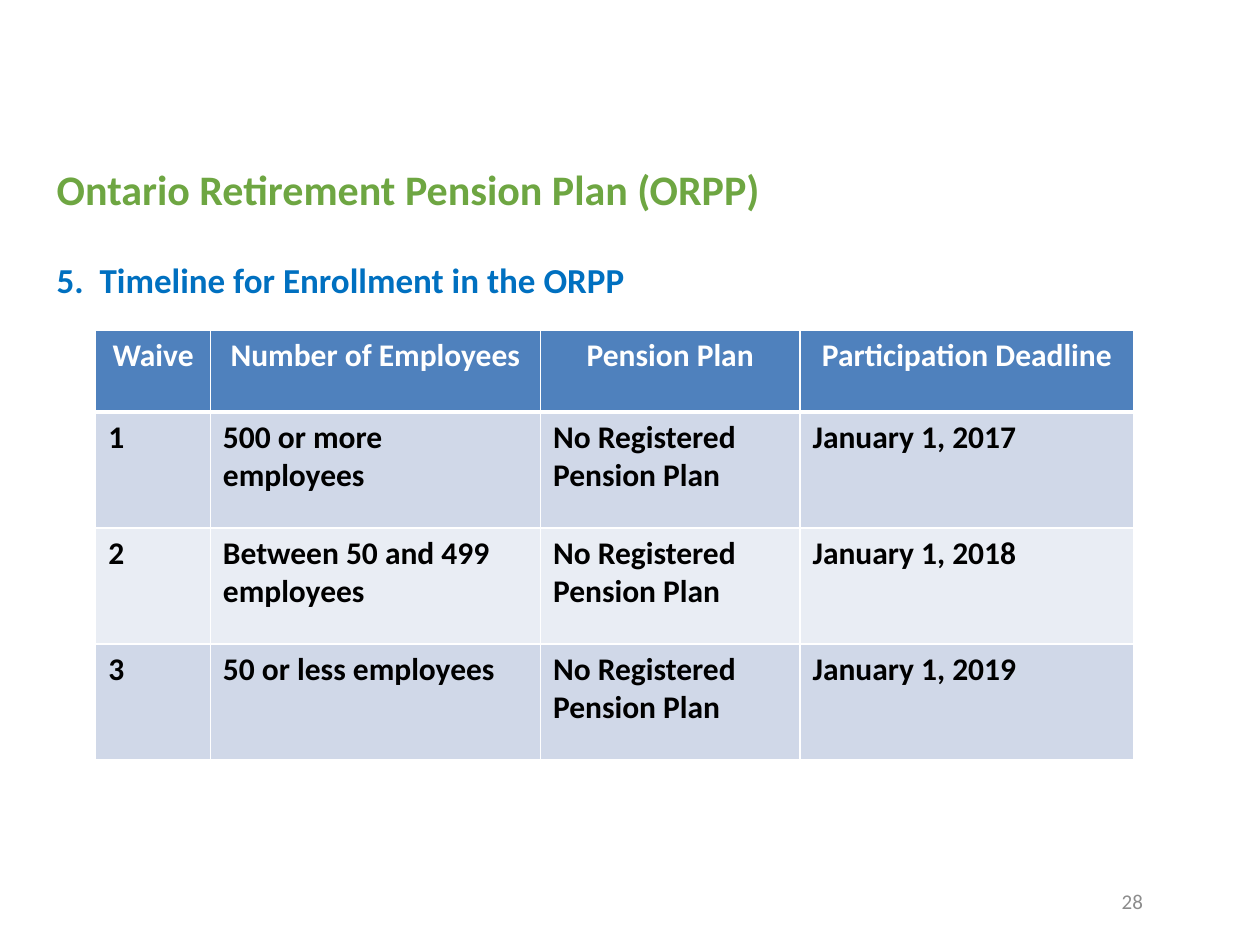
from lxml import etree
from pptx import Presentation
from pptx.dml.color import RGBColor
from pptx.enum.text import MSO_ANCHOR, MSO_AUTO_SIZE, PP_ALIGN
from pptx.oxml.ns import qn
from pptx.util import Inches, Pt

LEFT, CENTER, RIGHT = PP_ALIGN.LEFT, PP_ALIGN.CENTER, PP_ALIGN.RIGHT
TOP, MIDDLE, BOTTOM = MSO_ANCHOR.TOP, MSO_ANCHOR.MIDDLE, MSO_ANCHOR.BOTTOM

MARGIN, CONTENT_W = 0.35, 9.3
COL_WIDTHS = [0.91, 2.62, 2.06, 2.65]
HEADER_H, ROW_H = 0.65, 0.92
HEADER_FILL, BAND_FILLS = "4F81BD", ["D0D8E8", "E9EDF4"]

HEADER = ["Waive", "Number of Employees", "Pension Plan", "Participation Deadline"]
WAVES = [
    ("500 or more employees", "January 1, 2017"),
    ("Between 50 and 499 employees", "January 1, 2018"),
    ("50 or less employees", "January 1, 2019"),
]


def rgb(color):
    return RGBColor.from_string(color)


def write(tf, text, size, color, bold=True, align=LEFT):
    tf.text = text
    p = tf.paragraphs[0]
    p.alignment = align
    p.space_before = Pt(0)
    p.font.name, p.font.size, p.font.bold = "Calibri", Pt(size), bold
    p.font.color.rgb = rgb(color)
    return p


def place(sp, left, top, width, height, anchor):
    sp.left, sp.top = Inches(left), Inches(top)
    sp.width, sp.height = Inches(width), Inches(height)
    sp.text_frame.word_wrap = True
    sp.text_frame.vertical_anchor = anchor


def add_title(s):
    sp = s.shapes.title
    place(sp, MARGIN, 1.25, CONTENT_W, 0.5, BOTTOM)
    sp.text_frame.auto_size = MSO_AUTO_SIZE.NONE
    write(sp.text_frame, "Ontario Retirement Pension Plan (ORPP)", 24, "6EA642")


def add_heading(s):
    sp = s.placeholders[1]
    place(sp, MARGIN, 2, CONTENT_W, 4.5, TOP)
    p = write(sp.text_frame, "5.  Timeline for Enrollment in the ORPP", 20, "0070C0")
    pPr = p._p.get_or_add_pPr()
    pPr.set("marL", str(Inches(0.38)))
    pPr.set("indent", str(-Inches(0.38)))
    spacing = pPr.find(qn("a:spcBef"))
    spacing.addnext(etree.Element(qn("a:buNone")))


def set_borders(cell, top, bottom):
    """Draw white cell borders; top and bottom are widths in points."""
    tcPr = cell._tc.get_or_add_tcPr()
    widths = {"a:lnL": 1, "a:lnR": 1, "a:lnT": top, "a:lnB": bottom}
    for i, (tag, width) in enumerate(widths.items()):
        ln = etree.Element(qn(tag), w=str(Pt(width)))
        fill = etree.SubElement(ln, qn("a:solidFill"))
        etree.SubElement(fill, qn("a:srgbClr"), val="FFFFFF")
        tcPr.insert(i, ln)


def add_timeline(s):
    rows = [HEADER] + [
        [str(n), employees, "No Registered Pension Plan", deadline]
        for n, (employees, deadline) in enumerate(WAVES, 1)
    ]
    heights = [HEADER_H] + [ROW_H] * len(WAVES)
    table = s.shapes.add_table(
        len(rows), len(COL_WIDTHS), Inches(0.76), Inches(2.62),
        Inches(sum(COL_WIDTHS)), Inches(sum(heights))).table
    for column, width in zip(table.columns, COL_WIDTHS):
        column.width = Inches(width)
    for r, (values, height) in enumerate(zip(rows, heights)):
        table.rows[r].height = Inches(height)
        is_header = r == 0
        for c, text in enumerate(values):
            cell = table.cell(r, c)
            cell.fill.solid()
            cell.fill.fore_color.rgb = rgb(
                HEADER_FILL if is_header else BAND_FILLS[(r - 1) % 2])
            set_borders(cell, top=3 if r == 1 else 1, bottom=3 if is_header else 1)
            write(cell.text_frame, text, 18, "FFFFFF" if is_header else "000000",
                  align=CENTER if is_header else LEFT)


def add_page_number(s):
    sp = s.shapes.add_textbox(0, 0, 0, 0)
    place(sp, 7.17, 6.95, 2, 0.4, MIDDLE)
    write(sp.text_frame, "28", 12, "8C8C8C", bold=False, align=RIGHT)


def main():
    prs = Presentation()
    prs.slide_width, prs.slide_height = Inches(10), Inches(7.5)
    s = prs.slides.add_slide(prs.slide_layouts[1])
    add_heading(s)
    add_page_number(s)
    add_title(s)
    add_timeline(s)
    prs.save("out.pptx")


if __name__ == "__main__":
    main()
